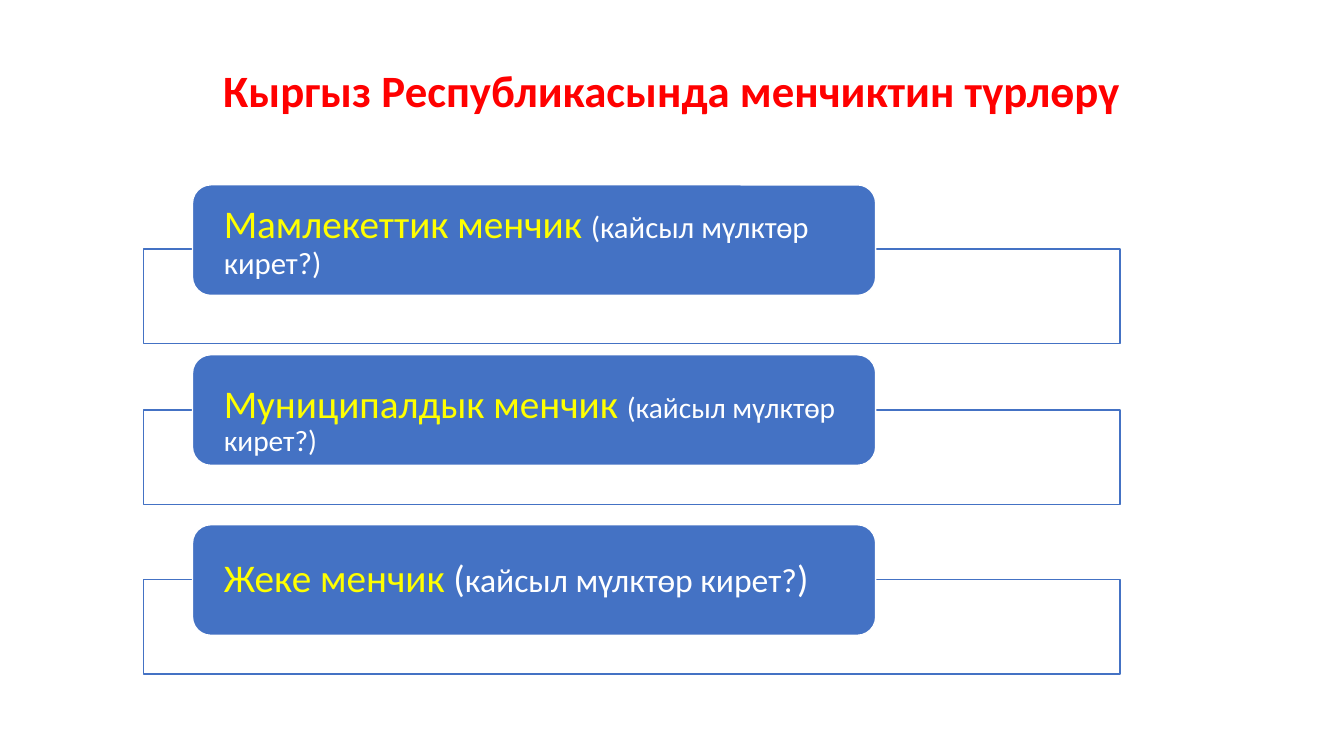
from lxml import etree
from pptx import Presentation
from pptx.dml.color import RGBColor
from pptx.enum import shapes, text
from pptx.oxml import ns
from pptx.util import Pt

RED = RGBColor(0xFF, 0, 0)
BLUE = RGBColor(0x44, 0x72, 0xC4)
YELLOW = RGBColor(0xFF, 0xFF, 0)
WHITE = RGBColor(0xFF, 0xFF, 0xFF)
KIND = shapes.MSO_SHAPE

deck = Presentation()
deck.slide_width, deck.slide_height = Pt(960), Pt(540)
slide = deck.slides.add_slide(deck.slide_layouts[5])


def write(para, words, size, color, bold=False):
    run = para.add_run()
    run.text = words
    run.font.name = "Calibri"
    run.font.size = Pt(size)
    run.font.bold = bold
    run.font.color.rgb = color


def draw(kind, left, top, width, height, fill, line):
    box = slide.shapes.add_shape(kind, Pt(left), Pt(top), Pt(width), Pt(height))
    box.shadow.inherit = False
    box.fill.solid()
    box.fill.fore_color.rgb = fill
    box.line.color.rgb = line
    box.line.width = Pt(1)
    return box


title = slide.shapes.title
title.left, title.top, title.width, title.height = Pt(66), Pt(28.75), Pt(828), Pt(75)
frame = title.text_frame
frame.auto_size = text.MSO_AUTO_SIZE.NONE
frame.vertical_anchor = text.MSO_ANCHOR.MIDDLE
para = frame.paragraphs[0]
para.alignment = text.PP_ALIGN.CENTER
para.line_spacing = 0.9
write(para, "Кыргыз Республикасында менчиктин түрлөрү", 32, RED, bold=True)

# Each row: top of the frame, top inset of the label, name, question parts with sizes
rows = [
    (178, 4, "Мамлекеттик менчик ", [("(кайсыл мүлктөр кирет?)", 22)]),
    (293, 16, "Муниципалдык менчик ", [("(кайсыл мүлктөр кирет?)", 21)]),
    (414, 0, "Жеке менчик ", [("(", 27), ("кайсыл мүлктөр кирет?", 24), (")", 27)]),
]
for i, (top, inset, name, asks) in enumerate(rows):
    panel = draw(KIND.RECTANGLE, 102.5, top, 697.5, 67.5, WHITE, BLUE)
    tint = panel.fill._xPr.find(".//" + ns.qn("a:srgbClr"))
    etree.SubElement(tint, ns.qn("a:alpha"), val="90000")

    label = draw(KIND.ROUNDED_RECTANGLE, 137.5, 132 + 121.4 * i, 488, 79, BLUE, WHITE)
    frame = label.text_frame
    frame.word_wrap = True
    frame.vertical_anchor = text.MSO_ANCHOR.MIDDLE
    frame.margin_left = frame.margin_right = Pt(18.5)
    frame.margin_top, frame.margin_bottom = Pt(inset), 0
    para = frame.paragraphs[0]
    para.alignment = text.PP_ALIGN.LEFT
    para.line_spacing = 0.9
    write(para, name, 28, YELLOW)
    for words, size in asks:
        write(para, words, size, WHITE)

deck.save("out.pptx")
